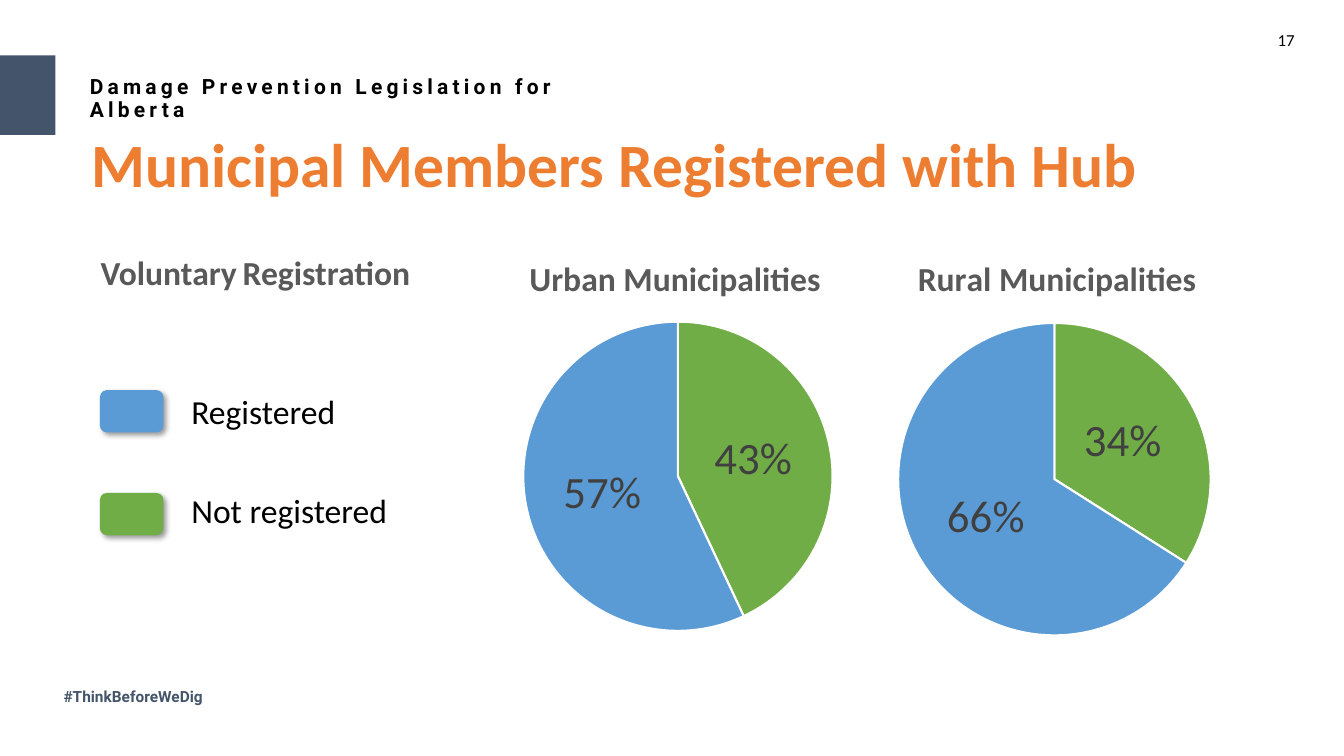
from lxml import etree
from pptx import Presentation, util as u
from pptx.chart.data import CategoryChartData
from pptx.dml.color import RGBColor
from pptx.enum import chart as ch, shapes, text
from pptx.oxml import parse_xml
from pptx.oxml.ns import nsdecls, qn

WIDE, HIGH = u.Inches(13.33), u.Inches(7.5)
HUES = {"slate": "44546A", "orange": "ED7D31", "gray": "595959", "dark": "404040",
        "blue": "5B9BD5", "green": "70AD47", "black": "000000", "white": "FFFFFF"}
SNUG = (0.08, 0.08, 0.08, 0)
PAD = (0.1, 0.05, 0.1, 0.05)


def hue(name):
    """Return the named colour."""
    return RGBColor.from_string(HUES[name])


def area(x, y, w, h):
    """Turn percentages of the slide into lengths."""
    return [int(side * part / 100)
            for side, part in zip((WIDE, HIGH, WIDE, HIGH), (x, y, w, h))]


def style(font, size, color, bold=False, face="Calibri"):
    """Set the look of a font."""
    font.size, font.bold, font.name = u.Pt(size), bold, face
    font.color.rgb = hue(color)


def label(slide, at, runs, pad=PAD, mid=False, lead=1.0, right=False, gap=0):
    """Add a text box made of (words, size, colour, bold, face) runs."""
    frame = slide.shapes.add_textbox(*area(*at)).text_frame
    frame.word_wrap = True
    frame.margin_left, frame.margin_top, frame.margin_right, frame.margin_bottom = map(u.Inches, pad)
    frame.vertical_anchor = text.MSO_ANCHOR.MIDDLE if mid else text.MSO_ANCHOR.TOP
    para = frame.paragraphs[0]
    para.line_spacing = lead
    para.alignment = text.PP_ALIGN.RIGHT if right else text.PP_ALIGN.LEFT
    for words, *look in runs:
        run = para.add_run()
        run.text = words
        style(run.font, *look)
        if gap:
            run.font._element.set("spc", str(gap * 100))


def block(slide, kind, at, color):
    """Add a plain filled shape."""
    shape = slide.shapes.add_shape(kind, *area(*at))
    shape.shadow.inherit = False
    shape.fill.solid()
    shape.fill.fore_color.rgb = hue(color)
    shape.line.fill.background()
    return shape


def shade(shape):
    """Give a shape a soft shadow to the lower right."""
    glow = shape._element.spPr.find(qn("a:effectLst"))
    glow.append(parse_xml(
        f'<a:outerShdw {nsdecls("a")} blurRad="{u.Pt(4)}" dist="{u.Pt(3)}" dir="2700000" '
        'algn="tl" rotWithShape="0"><a:srgbClr val="000000"><a:alpha val="40000"/>'
        '</a:srgbClr></a:outerShdw>'))


def layout(x, y, w=None, h=None, inner=False):
    """Build a manual chart layout from shares of the chart."""
    node = parse_xml(f'<c:layout {nsdecls("c")}><c:manualLayout/></c:layout>')
    items = [("layoutTarget", "inner")] if inner else []
    items += [("xMode", "edge"), ("yMode", "edge"), ("x", x), ("y", y)]
    items += [("w", w), ("h", h)] if inner else []
    for tag, val in items:
        etree.SubElement(node[0], qn("c:" + tag)).set("val", str(val))
    return node


def place(parent, node, after=None):
    """Put a layout in a chart part in place of any old one."""
    for old in parent.findall(qn("c:layout")):
        parent.remove(old)
    if after is None:
        parent.insert(0, node)
    else:
        after.addnext(node)


def pie(slide, at, title, vals, left):
    """Add a titled pie with percent labels."""
    data = CategoryChartData(number_format="0%")
    data.categories = ["1", "2"]
    data.add_series("Series 1", vals)
    chart = slide.shapes.add_chart(ch.XL_CHART_TYPE.PIE, *area(*at), data).chart
    style(chart.font, 10, "black")
    chart.has_legend = False
    chart.has_title = True
    run = chart.chart_title.text_frame.paragraphs[0].add_run()
    run.text = title
    style(run.font, 24, "gray", True)
    head = chart.chart_title._element
    place(head, layout(left, 0.02), head.find(qn("c:tx")))
    chart.chart_title.include_in_layout = False

    plot = chart.plots[0]
    plot.vary_by_categories = True
    plot.has_data_labels = True
    tags = plot.data_labels
    tags.show_value, tags.show_percentage = True, False
    tags.number_format, tags.number_format_is_linked = "0%", False
    tags.position = ch.XL_LABEL_POSITION.CENTER
    style(tags.font, 32, "dark")
    for i, color in enumerate(("green", "blue")):
        part = plot.series[0].points[i].format
        part.fill.solid()
        part.fill.fore_color.rgb = hue(color)
        part.line.color.rgb = hue("white")
        part.line.width = u.Pt(1.5)

    root = chart.element
    place(root.find(".//" + qn("c:plotArea")), layout(0.27, 0.19, 0.46, 0.78, True))
    root.find(qn("c:txPr")).addprevious(parse_xml(
        f'<c:spPr {nsdecls("c", "a")}><a:noFill/><a:ln><a:noFill/></a:ln></c:spPr>'))


def legend(slide):
    """Add the colour key, one row per state."""
    for row, (words, color) in enumerate((("Registered", "blue"), ("Not registered", "green"))):
        shade(block(slide, shapes.MSO_SHAPE.ROUNDED_RECTANGLE,
                    (7.43, 51.6 + 13.6 * row, 4.73, 5.6), color))
        label(slide, (13.5, 51.07 + 13.07 * row, 20, 6.67), [(words, 24, "black")])


def main():
    """Build and save the slide."""
    deck = Presentation()
    deck.slide_width, deck.slide_height = WIDE, HIGH
    slide = deck.slides.add_slide(deck.slide_layouts[6])
    block(slide, shapes.MSO_SHAPE.RECTANGLE, (-0.3, 7.33, 4.43, 10.53), "slate")
    label(slide, (4.13, 90.13, 11.85, 3.33),
          [("#ThinkBeforeWeDig", 11, "slate", True, "Roboto")], SNUG, True, 0.9)
    label(slide, (91.13, 3.33, 5.93, 4), [("17", 12, "black")], mid=True, right=True)
    label(slide, (6.08, 9.07, 43.43, 7.07),
          [("Damage Prevention Legislation for Alberta", 15, "black", True, "Roboto")],
          SNUG, True, 0.9, gap=3)
    label(slide, (6.08, 17.07, 89.55, 9.2),
          [("Municipal Members Registered with Hub", 44, "orange", True)], lead=0.9)
    pie(slide, (25.43, 32, 50.03, 53.47), "Urban Municipalities", (0.43, 0.57), 0.27)
    pie(slide, (53.18, 32, 50.55, 54.13), "Rural Municipalities", (0.34, 0.66), 0.29)
    legend(slide)
    label(slide, (6.75, 32.67, 25.73, 6.67),
          [("Voluntary", 24, "gray", True), (" ", 18, "black"),
           ("Registration", 24, "gray", True)])
    deck.save("out.pptx")


if __name__ == "__main__":
    main()
